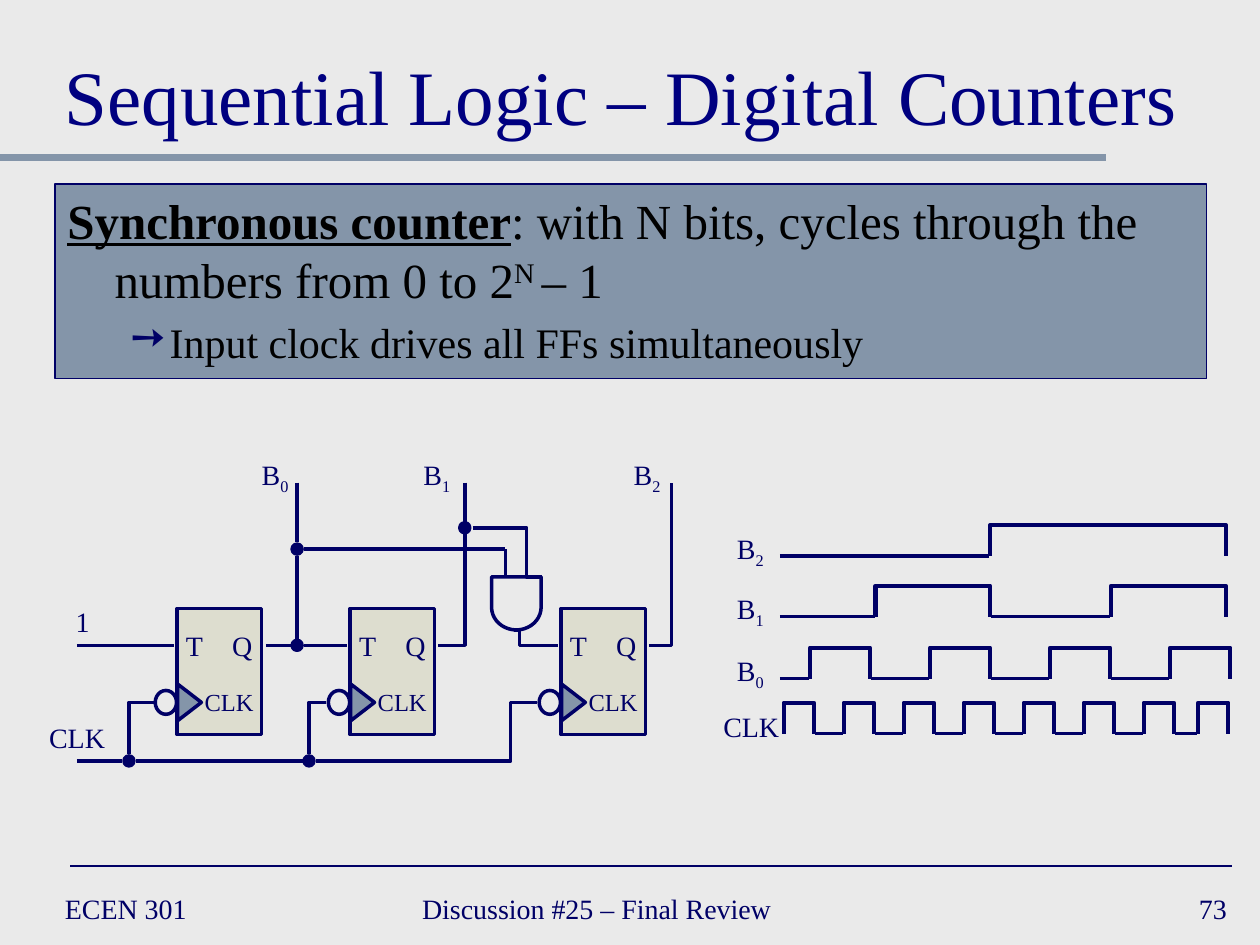
"""Builds a slide on synchronous digital counters with circuit and timing diagrams."""
import math

from lxml import etree
from pptx import Presentation, util as u
from pptx.dml.color import RGBColor
from pptx.enum import shapes, text
from pptx.oxml.ns import qn

NAVY = RGBColor(0x00, 0x00, 0x66)
TITLE_BLUE = RGBColor(0x00, 0x00, 0x80)
SLATE = RGBColor(0x84, 0x95, 0xA9)
OLIVE = RGBColor(0xAB, 0xA9, 0x64)
BLACK = RGBColor(0x00, 0x00, 0x00)
PAPER = RGBColor(0xEA, 0xEA, 0xEA)
FONT = "Times New Roman"

CLOCK_Y, SIGNAL_Y, CLOCK_IN_Y, OUTPUT_Y = 15.34, 13.01, 14.16, 9.73
B0_X, B1_X, B2_X = 5.99, 9.37, 13.54
FLIP_FLOP_LEFTS = (3.57, 7.06, 11.31)
PULSE_HEIGHT = 0.62


def style_run(run, size, color=NAVY, baseline=0):
    run.font.name, run.font.size = FONT, u.Pt(size)
    run.font.color.rgb = color
    if baseline:
        run.font._element.set("baseline", str(baseline * 1000))


def add_label(slide, box, words, size=16, color=NAVY, align=text.PP_ALIGN.CENTER,
              anchor=text.MSO_ANCHOR.TOP, subscript="", wrap=False):
    frame = slide.shapes.add_textbox(*map(u.Cm, box)).text_frame
    frame.word_wrap = wrap
    frame.vertical_anchor = anchor
    line = frame.paragraphs[0]
    line.text = words
    line.alignment = align
    style_run(line.runs[0], size, color)
    if subscript:
        digit = line.add_run()
        digit.text = subscript
        style_run(digit, size, color, -25)


def add_part(slide, kind, box, fill=None, weight=2.0):
    part = slide.shapes.add_shape(kind, *map(u.Cm, box))
    outline(part, weight)
    if fill is not None:
        part.fill.solid()
        part.fill.fore_color.rgb = fill
    return part


def outline(part, weight):
    part.shadow.inherit = False
    part.fill.background()
    part.line.color.rgb = NAVY
    part.line.width = u.Pt(weight)


def add_path(slide, points, weight, close=False):
    corners = [(u.Cm(x), u.Cm(y)) for x, y in points]
    builder = slide.shapes.build_freeform(*corners[0])
    builder.add_line_segments(corners[1:], close=close)
    outline(builder.convert_to_shape(), weight)


def add_wire(slide, start, end, color=NAVY, weight=2.0, kind=shapes.MSO_CONNECTOR.STRAIGHT):
    wire = slide.shapes.add_connector(kind, *map(u.Cm, (*start, *end)))
    wire.line.color.rgb = color
    wire.line.width = u.Pt(weight)
    etree.SubElement(wire._element.spPr, qn("a:effectLst"))
    return wire


def add_elbow(slide, start, end, bend=None):
    wire = add_wire(slide, start, end, kind=shapes.MSO_CONNECTOR.ELBOW)
    geometry = wire._element.spPr.find(qn("a:prstGeom"))
    if bend is None:
        geometry.set("prst", "bentConnector2")
    else:
        guide = etree.SubElement(geometry.find(qn("a:avLst")), qn("a:gd"))
        guide.set("name", "adj1")
        guide.set("fmla", f"val {round(bend * 100000)}")


def add_junction(slide, x, y):
    add_part(slide, shapes.MSO_SHAPE.OVAL, (x - 0.1, y - 0.1, 0.2, 0.2), NAVY)


def add_flip_flop(slide, left):
    body = add_part(slide, shapes.MSO_SHAPE.RECTANGLE, (left, 12.27, 1.7, 2.54), OLIVE)
    tint = body._element.spPr.find(qn("a:solidFill"))[0]
    etree.SubElement(tint, qn("a:alpha")).set("val", "20000")
    clock_mark = add_part(slide, shapes.MSO_SHAPE.ISOSCELES_TRIANGLE,
                          (left - 0.12, 13.92, 0.74, 0.48), SLATE)
    clock_mark.rotation = 90
    add_label(slide, (left - 0.08, 12.55, 0.86, 0.94), "T")
    add_label(slide, (left + 0.86, 12.55, 0.91, 0.94), "Q")
    add_label(slide, (left + 0.3, 13.72, 1.5, 0.84), "CLK", 14)
    add_part(slide, shapes.MSO_SHAPE.OVAL, (left - 0.44, 13.92, 0.43, 0.48))


def add_and_gate(slide):
    center, top, shoulder, radius, depth = 10.41, 11.63, 12.24, 0.5, 0.46
    angles = [math.radians(step) for step in range(0, 181, 9)]
    arc = [(center + radius * math.cos(a), shoulder + depth * math.sin(a)) for a in angles]
    add_path(slide, [(center - radius, top), (center + radius, top), *arc], 2, close=True)


def add_circuit(slide):
    for left in FLIP_FLOP_LEFTS:
        add_flip_flop(slide, left)
    add_and_gate(slide)

    for x, y in ((2.6, CLOCK_Y), (6.23, CLOCK_Y), (B0_X, SIGNAL_Y), (B0_X, 11.07), (B1_X, 10.64)):
        add_junction(slide, x, y)
    for left, right, y in ((1.55, 2.46, CLOCK_Y), (2.74, 6.1, CLOCK_Y), (1.55, 3.51, SIGNAL_Y),
                           (5.36, 5.87, SIGNAL_Y), (6.12, 6.99, SIGNAL_Y), (6.12, 10.19, 11.07)):
        add_wire(slide, (left, y), (right, y))
    for x, top, bottom in ((B0_X, OUTPUT_Y, 10.93), (B0_X, 11.2, 12.88),
                           (B1_X, OUTPUT_Y, 10.52), (10.19, 11.07, 11.63)):
        add_wire(slide, (x, top), (x, bottom))

    add_elbow(slide, (3.1, CLOCK_IN_Y), (2.6, 15.21))
    add_elbow(slide, (6.58, CLOCK_IN_Y), (6.23, 15.21))
    add_elbow(slide, (8.84, SIGNAL_Y), (B1_X, 10.77))
    add_elbow(slide, (13.08, SIGNAL_Y), (B2_X, OUTPUT_Y))
    add_elbow(slide, (6.38, CLOCK_Y), (10.83, CLOCK_IN_Y), 0.88)
    add_elbow(slide, (10.36, 12.7), (11.25, SIGNAL_Y), 0.13)
    add_elbow(slide, (9.53, 10.64), (10.92, 11.63), 0.78)

    add_label(slide, (0.74, 14.4, 1.63, 0.94), "CLK")
    add_label(slide, (1.27, 12.07, 0.79, 0.94), "1")
    for bit, left in enumerate((5.0, 8.26, 12.5)):
        add_label(slide, (left, 9.09, 1.09, 0.94), "B", subscript=str(bit))


def add_waveform(slide, top, lefts, width, lead_in=None):
    low = top + PULSE_HEIGHT
    previous_end = lead_in
    for left in lefts:
        right = left + width
        if previous_end is not None:
            add_wire(slide, (previous_end, low), (left - 0.02, low))
        add_path(slide, [(left, low), (left, top), (right, top), (right, low)], 2.5)
        previous_end = right + 0.02


def add_timing_diagram(slide):
    clock_lefts = [15.8 + 1.21 * i for i in range(7)] + [24.15]
    add_waveform(slide, 14.17, clock_lefts, 0.61)
    add_label(slide, (14.33, 14.17, 1.63, 0.94), "CLK")
    bits = ((13.06, 16.33, 2.42, 4, 1.21), (11.81, 17.65, 4.75, 2, 2.31),
            (10.59, 19.96, 0, 1, 4.75))
    for bit, (top, first, pitch, count, width) in enumerate(bits):
        add_waveform(slide, top, [first + pitch * i for i in range(count)], width, 15.72)
        add_label(slide, (14.58, top, 1.09, 0.94), "B", subscript=str(bit))


def indent(paragraph, margin, hanging):
    properties = paragraph._p.get_or_add_pPr()
    properties.set("marL", str(u.Cm(margin)))
    properties.set("indent", str(-u.Cm(hanging)))
    return properties


def add_definition(slide):
    panel = add_part(slide, shapes.MSO_SHAPE.RECTANGLE, (1.11, 3.71, 23.22, 3.92), SLATE, 0.75)
    frame = panel.text_frame
    frame.word_wrap = True
    frame.vertical_anchor = text.MSO_ANCHOR.TOP
    definition, detail = frame.paragraphs[0], frame.add_paragraph()
    indent(definition, 0.95, 0.95)
    for words, baseline in (("Synchronous counter", 0),
                            (": with N bits, cycles through the numbers from 0 to 2", 0),
                            ("N ", 30), ("– 1", 0)):
        run = definition.add_run()
        run.text = words
        style_run(run, 28, BLACK, baseline)
    term = definition.runs[0].font
    term.bold = term.underline = True

    detail.text = "Input clock drives all FFs simultaneously"
    detail.space_before = u.Pt(5)
    properties = indent(detail, 2.06, 0.79)
    bullet_color = etree.SubElement(properties, qn("a:buClr"))
    etree.SubElement(bullet_color, qn("a:srgbClr")).set("val", str(NAVY))
    etree.SubElement(properties, qn("a:buChar")).set("char", "➙")
    style_run(detail.runs[0], 24, BLACK)
    for paragraph in frame.paragraphs:
        paragraph.alignment = text.PP_ALIGN.LEFT


def add_frame(slide):
    left, right, middle = text.PP_ALIGN.LEFT, text.PP_ALIGN.RIGHT, text.MSO_ANCHOR.MIDDLE
    add_wire(slide, (0, 3.18), (22.3, 3.18), SLATE, 4)
    add_wire(slide, (1.42, 17.46), (24.84, 17.46), NAVY, 1)
    for x, width, words, align in ((1.06, 5.5, "ECEN 301", left),
                                   (8.26, 9.73, "Discussion #25 – Final Review", left),
                                   (19.69, 5.29, "73", right)):
        add_label(slide, (x, 17.78, width, 1.06), words, align=align, anchor=middle, wrap=True)
    add_label(slide, (1.06, 0.42, 23.3, 2.54), "Sequential Logic – Digital Counters", 44,
              TITLE_BLUE, left, text.MSO_ANCHOR.BOTTOM, wrap=True)


def main():
    deck = Presentation()
    deck.slide_width, deck.slide_height = u.Cm(25.4), u.Cm(19.05)
    slide = deck.slides.add_slide(deck.slide_layouts[6])
    slide.background.fill.solid()
    slide.background.fill.fore_color.rgb = PAPER
    add_frame(slide)
    add_definition(slide)
    add_circuit(slide)
    add_timing_diagram(slide)
    deck.save("out.pptx")


if __name__ == "__main__":
    main()
